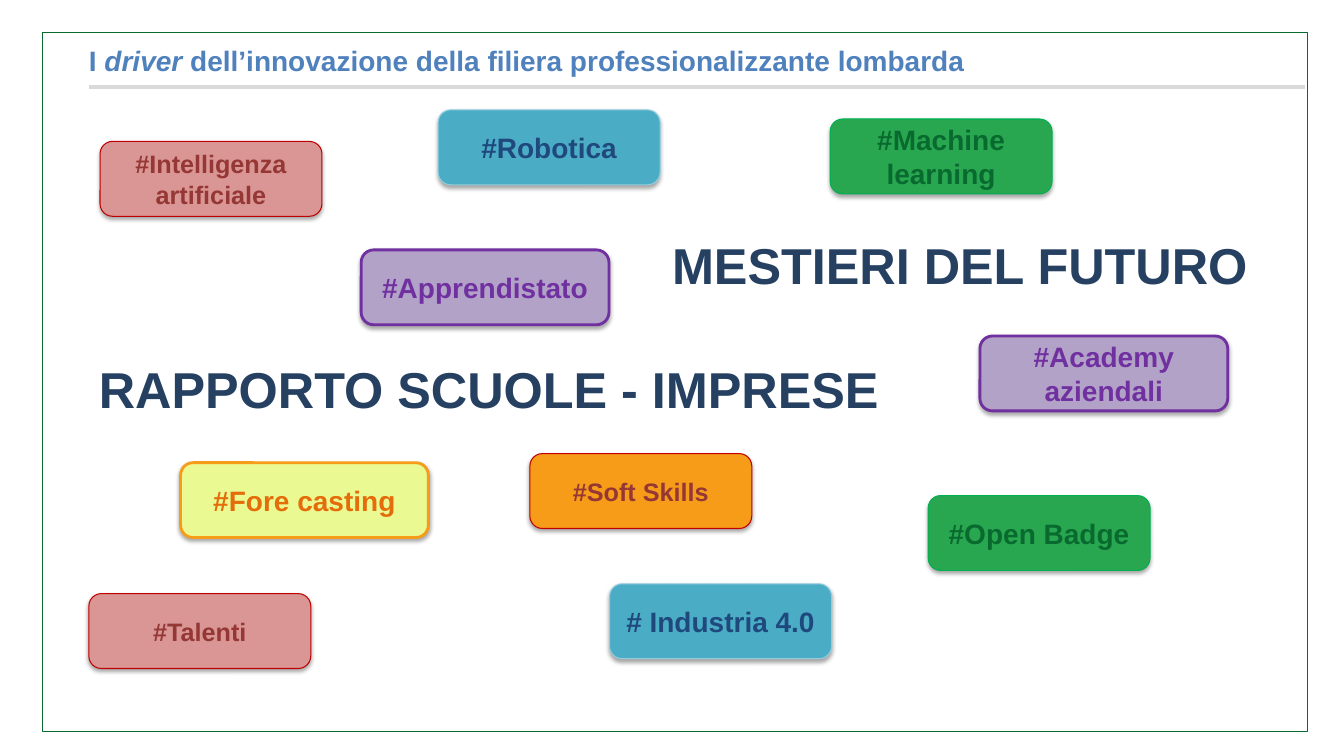
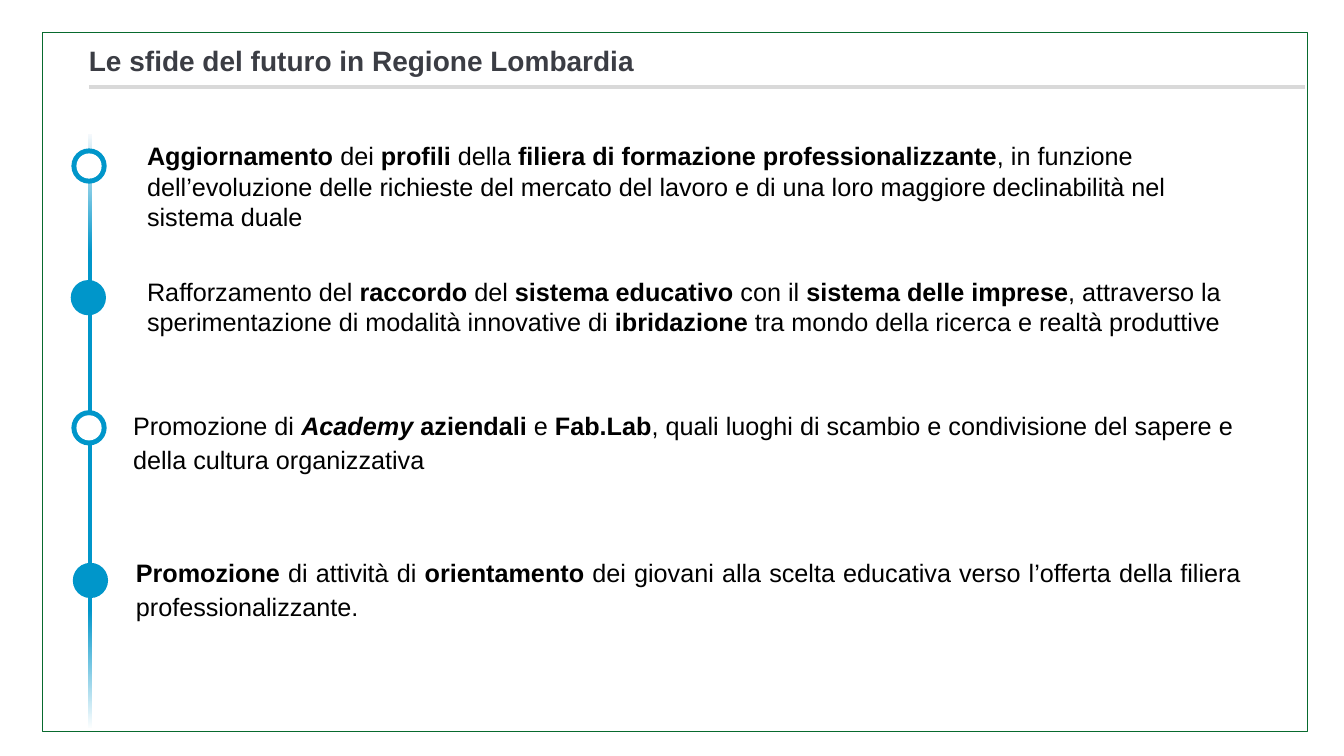
"""Build two slides on the drivers and challenges of vocational training."""
from dataclasses import dataclass
from typing import NamedTuple

import pptx
import pptx.dml.color
import pptx.enum.shapes
import pptx.enum.text
import pptx.oxml
import pptx.oxml.ns
import pptx.util

Pt = pptx.util.Pt
RGB = pptx.dml.color.RGBColor
KIND = pptx.enum.shapes.MSO_SHAPE
ALIGN = pptx.enum.text.PP_ALIGN
ANCHOR = pptx.enum.text.MSO_ANCHOR
FIT = pptx.enum.text.MSO_AUTO_SIZE

FONT = "Arial"
WHITE = RGB(0xFF, 0xFF, 0xFF)
BLACK = RGB(0x00, 0x00, 0x00)
GREY = RGB(0xD9, 0xD9, 0xD9)
SLATE = RGB(0x3B, 0x3D, 0x44)
AZURE = RGB(0x4F, 0x81, 0xBD)
NAVY = RGB(0x25, 0x40, 0x61)
CYAN = RGB(0x00, 0x96, 0xCA)
MIST = RGB(0xF6, 0xF9, 0xFC)
RED = RGB(0xC0, 0x00, 0x00)
ROSE = RGB(0xD9, 0x96, 0x94)
BRICK = RGB(0x95, 0x37, 0x35)
TEAL = RGB(0x4B, 0xAC, 0xC6)
SKY = RGB(0x93, 0xCD, 0xDD)
BLUE = RGB(0x1F, 0x49, 0x7D)
LILAC = RGB(0xB3, 0xA2, 0xC7)
PLUM = RGB(0x70, 0x30, 0xA0)
LEAF = RGB(0x29, 0xA7, 0x50)
LIME = RGB(0x00, 0xB0, 0x50)
PINE = RGB(0x08, 0x6A, 0x2E)
GOLD = RGB(0xF6, 0x9C, 0x18)
LEMON = RGB(0xEA, 0xF9, 0x91)
RUST = RGB(0xE4, 0x6C, 0x0A)

EDGE = 63.5
TAG_H = 53.5
KNOT = 25.2
HOLE = 18
NS = pptx.oxml.ns.nsdecls("a")
SHADE = (
    f'<a:outerShdw {NS} blurRad="{Pt(3.1)}" dist="{Pt(1.8)}" dir="5400000" '
    'rotWithShape="0"><a:srgbClr val="000000"><a:alpha val="35000"/>'
    "</a:srgbClr></a:outerShdw>"
)


class Box(NamedTuple):
    """Hold left, top, width and height in points."""
    left: float
    top: float
    width: float
    height: float


class Bit(NamedTuple):
    """Hold a stretch of text with its style."""
    text: str
    bold: bool = False
    ital: bool = False


@dataclass(frozen=True)
class Look:
    """Describe one family of tags."""
    fill: RGB
    edge: RGB
    ink: RGB
    size: float = 20
    line: float = 0.75
    width: float = 158.5


@dataclass(frozen=True)
class Tag:
    """Describe one hashtag box."""
    text: str
    left: float
    top: float
    look: Look


@dataclass(frozen=True)
class Goal:
    """Describe one challenge and its knot on the time line."""
    box: Box
    knot: tuple[float, float]
    ring: bool
    just: bool
    bits: list[Bit]


PINK = Look(ROSE, RED, BRICK, size=18)
AQUA = Look(TEAL, SKY, BLUE)
GREEN = Look(LEAF, LIME, PINE)
VIOLET = Look(LILAC, PLUM, PLUM, line=2, width=177)
AMBER = Look(GOLD, RED, BRICK, size=18)
YELLOW = Look(LEMON, GOLD, RUST, line=2, width=177)

TAGS = [
    Tag("#Intelligenza artificiale", 71.5, 101, PINK),
    Tag("#Robotica", 313, 78.5, AQUA),
    Tag("#Apprendistato", 258, 178.5, VIOLET),
    Tag("#Machine learning", 593, 85, GREEN),
    Tag("#Soft Skills", 378.5, 324, AMBER),
    Tag("#Fore casting", 129, 330.5, YELLOW),
    Tag("#Academy aziendali", 700, 240, VIOLET),
    Tag("#Open Badge", 663, 354, GREEN),
    Tag("# Industria 4.0", 435.5, 417, AQUA),
    Tag("#Talenti", EDGE, 424, PINK),
]

THEMES = [
    (Box(473, 163.5, 459.5, 51), "MESTIERI DEL FUTURO"),
    (Box(EDGE, 252.5, 577.5, 51), "RAPPORTO SCUOLE - IMPRESE"),
]

GOALS = [
    Goal(Box(98, 97, 776, 94.5), (51, 106), True, False, [
        Bit("Aggiornamento ", True), Bit("dei "), Bit("profili ", True),
        Bit("della "),
        Bit("filiera di formazione professionalizzante", True),
        Bit(", in funzione dell’evoluzione delle richieste del mercato del "
            "lavoro e di una loro maggiore declinabilità nel sistema duale"),
    ]),
    Goal(Box(98, 193.5, 811, 72.5), (50.5, 200), False, False, [
        Bit("Rafforzamento del "), Bit("raccordo", True), Bit(" del "),
        Bit("sistema educativo ", True), Bit("con il "),
        Bit("sistema delle imprese", True),
        Bit(", attraverso la sperimentazione di modalità innovative di "),
        Bit("ibridazione", True),
        Bit(" tra mondo della ricerca e realtà produttive"),
    ]),
    Goal(Box(88, 286.5, 800, 57), (51, 293), True, True, [
        Bit("Promozione di "), Bit("Academy ", True, True),
        Bit("aziendali ", True), Bit("e "), Bit("Fab.Lab", True),
        Bit(", quali luoghi di scambio e condivisione del sapere e della "
            "cultura organizzativa"),
    ]),
    Goal(Box(90, 391.5, 803.5, 57), (52, 402), False, True, [
        Bit("Promozione", True), Bit(" di attività di "),
        Bit("orientamento", True),
        Bit(" dei giovani alla scelta educativa verso l’offerta della "
            "filiera professionalizzante."),
    ]),
]


def span(box: Box) -> list[pptx.util.Length]:
    """Turn a box into lengths."""
    return [Pt(val) for val in box]


def write(par, bits: list[Bit], size: float, ink: RGB) -> None:
    """Fill a paragraph with styled runs."""
    for bit in bits:
        run = par.add_run()
        run.text = bit.text
        font = run.font
        font.name, font.size = FONT, Pt(size)
        font.bold, font.italic = bit.bold, bit.ital
        font.color.rgb = ink


def shape(slide, kind, box: Box, fill: RGB | None = None,
          edge: RGB | None = None, line: float = 0):
    """Draw a flat preset shape."""
    item = slide.shapes.add_shape(kind, *span(box))
    item.shadow.inherit = False
    if fill is None:
        item.fill.background()
    else:
        item.fill.solid()
        item.fill.fore_color.rgb = fill
    if edge is None:
        item.line.fill.background()
    else:
        item.line.color.rgb = edge
        item.line.width = Pt(line)
    return item


def label(slide, box: Box, bits: list[Bit], size: float, ink: RGB):
    """Draw a text box and return its paragraph."""
    frame = slide.shapes.add_textbox(*span(box)).text_frame
    frame.word_wrap = True
    frame.auto_size = FIT.SHAPE_TO_FIT_TEXT
    par = frame.paragraphs[0]
    write(par, bits, size, ink)
    return par


def dress(deck, layout) -> None:
    """Give the layout its frame, rule and title place."""
    title = layout.placeholders[0]
    title.left, title.top, title.width, title.height = span(
        Box(EDGE, 31, 869, 24.5))
    text = title.text_frame
    text.margin_left = text.margin_right = 0
    text.margin_top = text.margin_bottom = 0
    text.vertical_anchor = ANCHOR.MIDDLE
    slide = deck.slides[0]
    rule = slide.shapes.add_connector(
        pptx.enum.shapes.MSO_CONNECTOR.STRAIGHT,
        Pt(EDGE), Pt(62), Pt(932.5), Pt(62))
    rule.line.color.rgb = GREY
    rule.line.width = Pt(3)
    rule.element.spPr.append(pptx.oxml.parse_xml(f"<a:effectLst {NS}/>"))
    frame = shape(slide, KIND.RECTANGLE, Box(30.5, 23, 903.5, 499.5),
                  edge=PINE, line=0.5)
    for num, item in enumerate((rule, frame), 90):
        item.element.xpath(".//p:cNvPr")[0].set("id", str(num))
        layout.element.cSld.spTree.append(item.element)


def head(slide, bits: list[Bit], ink: RGB) -> None:
    """Write the slide title."""
    par = slide.shapes.title.text_frame.paragraphs[0]
    par.alignment = ALIGN.LEFT
    write(par, bits, 20, ink)


def badge(slide, tag: Tag) -> None:
    """Draw one hashtag box with its shadow."""
    look = tag.look
    item = shape(slide, KIND.ROUNDED_RECTANGLE,
                 Box(tag.left, tag.top, look.width, TAG_H),
                 look.fill, look.edge, look.line)
    glow = item.element.spPr.find(pptx.oxml.ns.qn("a:effectLst"))
    glow.append(pptx.oxml.parse_xml(SHADE))
    frame = item.text_frame
    frame.word_wrap = True
    frame.vertical_anchor = ANCHOR.MIDDLE
    par = frame.paragraphs[0]
    par.alignment = ALIGN.CENTER
    write(par, [Bit(tag.text, True)], look.size, look.ink)


def stem(slide) -> None:
    """Draw the time line, fading at both ends."""
    item = shape(slide, KIND.RECTANGLE, Box(63, 95.5, 3, 425.5), CYAN)
    stops = "".join(
        f'<a:gs pos="{pos * 1000}"><a:srgbClr val="{ink}"/></a:gs>'
        for pos, ink in ((0, MIST), (20, CYAN), (80, CYAN), (100, WHITE)))
    fade = pptx.oxml.parse_xml(
        f'<a:gradFill {NS} rotWithShape="1"><a:gsLst>{stops}</a:gsLst>'
        '<a:lin ang="5400000" scaled="0"/></a:gradFill>')
    props = item.element.spPr
    props.replace(props.find(pptx.oxml.ns.qn("a:solidFill")), fade)


def step(slide, goal: Goal) -> None:
    """Draw one challenge with its knot."""
    left, top = goal.knot
    shape(slide, KIND.OVAL, Box(left, top, KNOT, KNOT), CYAN)
    if goal.ring:
        gap = (KNOT - HOLE) / 2
        shape(slide, KIND.OVAL, Box(left + gap, top + gap, HOLE, HOLE), WHITE)
    par = label(slide, goal.box, goal.bits, 18, BLACK)
    if goal.just:
        par.alignment = ALIGN.JUSTIFY
        par.line_spacing = 1.14


def main() -> None:
    """Build and save the deck."""
    deck = pptx.Presentation()
    deck.slide_width, deck.slide_height = Pt(960), Pt(540)
    layout = deck.slide_layouts[5]
    first, last = (deck.slides.add_slide(layout) for _ in range(2))
    dress(deck, layout)

    head(first, [
        Bit("I ", True), Bit("driver", True, True),
        Bit(" dell’innovazione della filiera professionalizzante lombarda",
            True),
    ], AZURE)
    for box, text in THEMES:
        label(first, box, [Bit(text, True)], 36, NAVY)
    for tag in TAGS:
        badge(first, tag)

    head(last, [Bit("Le sfide del futuro in Regione Lombardia", True)], SLATE)
    stem(last)
    for goal in GOALS:
        step(last, goal)
    deck.save("out.pptx")


if __name__ == "__main__":
    main()
